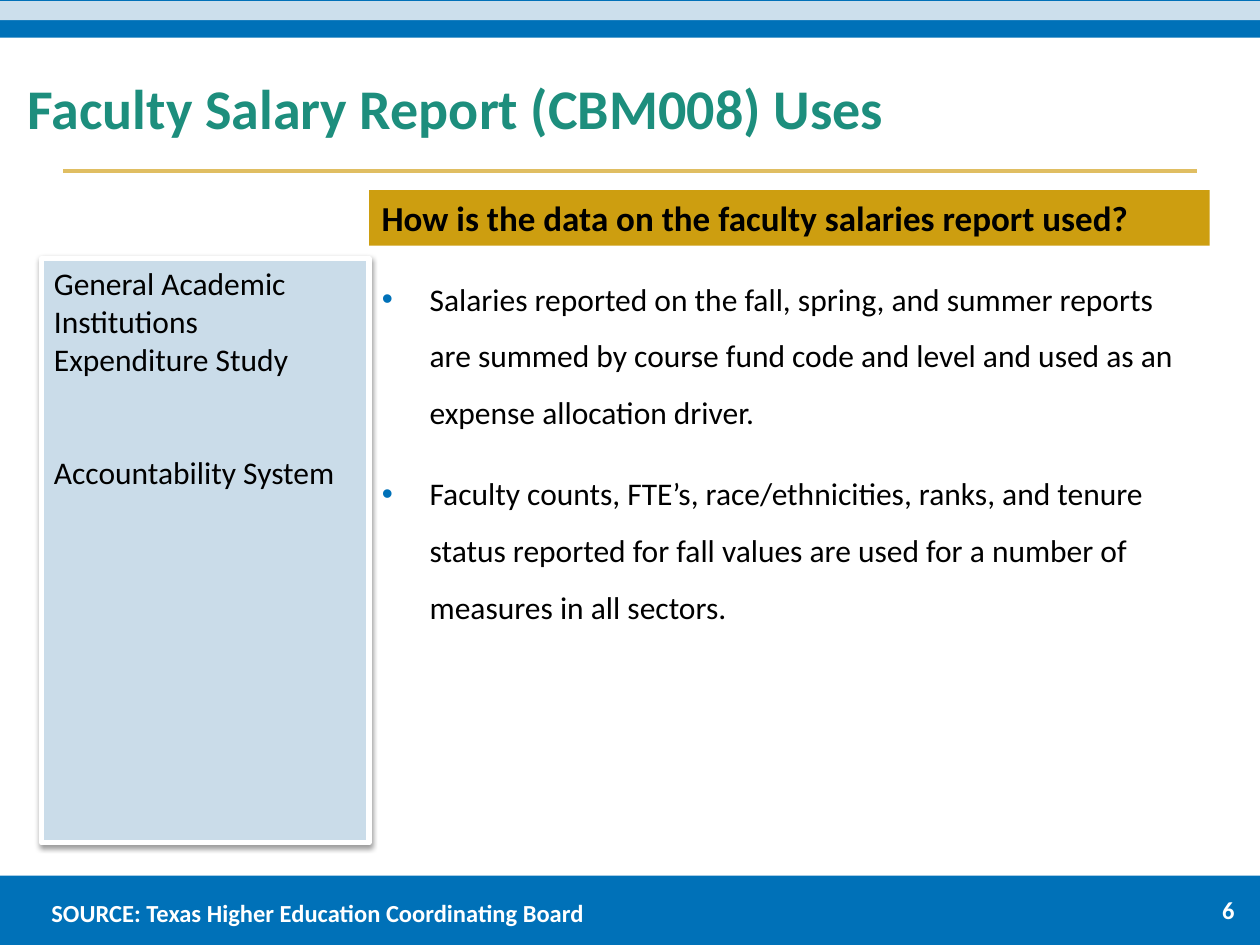
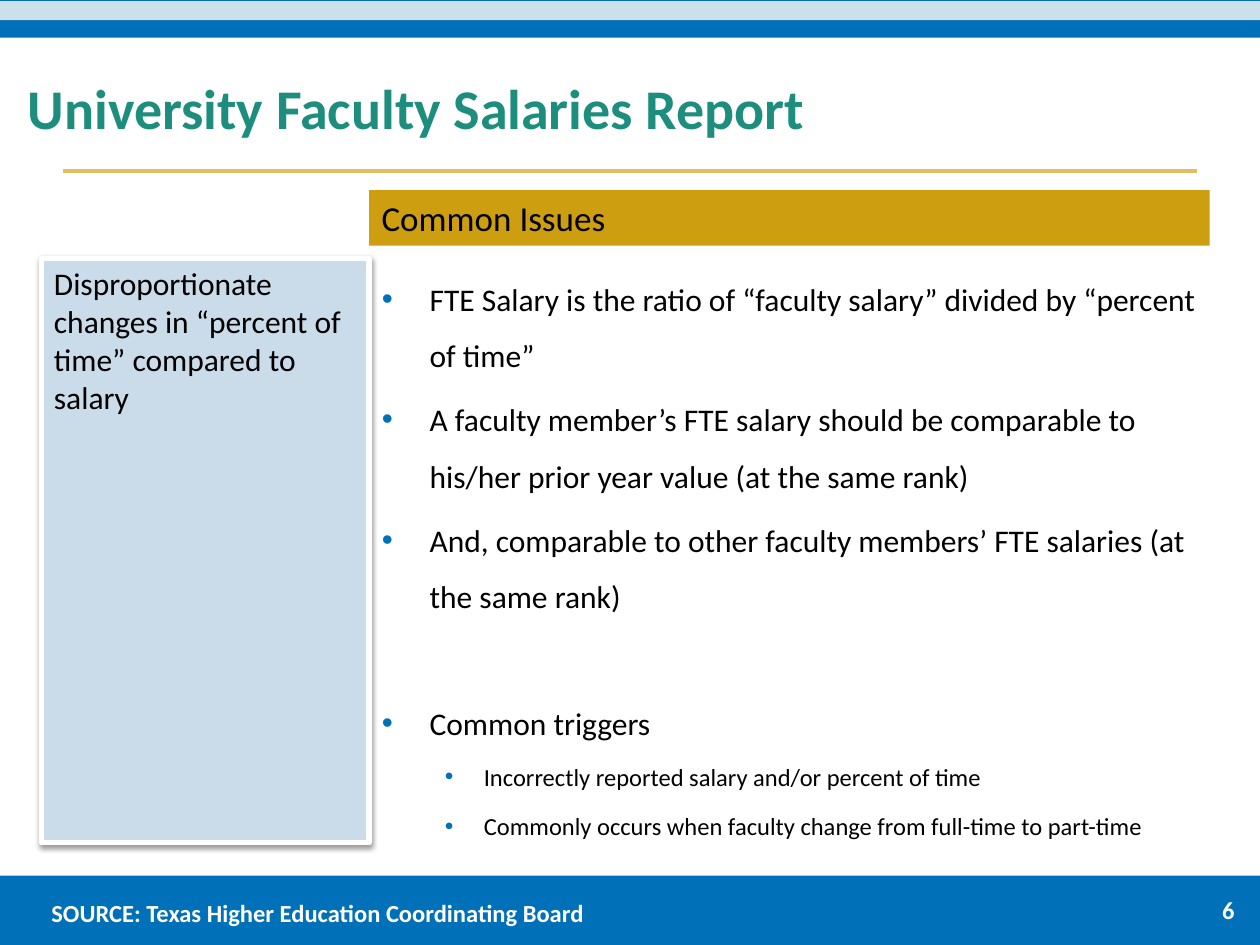
"""Build two slides on the faculty salary report: its uses and its common issues."""
from lxml import etree
from pptx import Presentation
from pptx.dml.color import RGBColor
from pptx.enum import shapes, text
from pptx.oxml import ns
from pptx.util import Inches, Pt

FONT = "Calibri"
BLUE, PALE_BLUE, SIDEBAR_BLUE = "0071B8", "CCDFEC", "CADCE9"
GOLD, PALE_GOLD, TEAL = "CD9E10", "E0BE62", "1D8E7D"
BLACK, WHITE = "000000", "FFFFFF"
SOURCE = "SOURCE: Texas Higher Education Coordinating Board"
PAGE_WIDTH, PAGE_HEIGHT = 10, 7.5
FOOTER_TOP = 6.95
CONTENT_LEFT, CONTENT_WIDTH = 2.93, 6.67
LEVELS = [(18, 0.38, -0.38, 4), (14, 0.81, -0.31, 3)]


def color(hex_code):
    """Turn a hex string into a colour."""
    return RGBColor.from_string(hex_code)


def add_xml(parent, tag, **attributes):
    """Append a DrawingML element to a parent."""
    return etree.SubElement(parent, ns.qn(tag), attributes)


def format_runs(paragraph, size, hex_code, bold=False):
    """Give all runs of a paragraph the same font."""
    for run in paragraph.runs:
        run.font.name = FONT
        run.font.size = Pt(size)
        run.font.bold = bold
        run.font.color.rgb = color(hex_code)


def write(shape, lines, size, hex_code, bold=False, anchor=text.MSO_ANCHOR.TOP, gap=0):
    """Write left-aligned paragraphs, with a gap in points between them."""
    frame = shape.text_frame
    frame.text = "\n".join(lines)
    frame.word_wrap = True
    frame.auto_size = text.MSO_AUTO_SIZE.NONE
    frame.vertical_anchor = anchor
    for index, paragraph in enumerate(frame.paragraphs):
        paragraph.alignment = text.PP_ALIGN.LEFT
        paragraph.space_before = Pt(gap if index else 0)
        format_runs(paragraph, size, hex_code, bold)


def place(shape, left, top, width, height):
    """Move and size a shape in inches."""
    shape.left, shape.top = Inches(left), Inches(top)
    shape.width, shape.height = Inches(width), Inches(height)


def add_block(slide, left, top, width, height, fill):
    """Add a plain filled rectangle."""
    block = slide.shapes.add_shape(
        shapes.MSO_SHAPE.RECTANGLE, Inches(left), Inches(top), Inches(width), Inches(height))
    block.fill.solid()
    block.fill.fore_color.rgb = color(fill)
    block.line.fill.background()
    block.shadow.inherit = False
    return block


def add_label(slide, left, top, width, height, words, anchor):
    """Add bold white text on the footer."""
    label = slide.shapes.add_textbox(Inches(left), Inches(top), Inches(width), Inches(height))
    write(label, [words], 14, WHITE, True, anchor)


def add_frame(slide):
    """Add the bands, the title rule and the footer text."""
    add_block(slide, 0, FOOTER_TOP, PAGE_WIDTH, PAGE_HEIGHT - FOOTER_TOP, BLUE)
    add_block(slide, 0, 0, PAGE_WIDTH, 0.3, BLUE)
    add_block(slide, 0, 0.01, PAGE_WIDTH, 0.15, PALE_BLUE)
    rule = slide.shapes.add_connector(
        shapes.MSO_CONNECTOR.STRAIGHT, Inches(0.5), Inches(1.36), Inches(9.5), Inches(1.36))
    rule.line.color.rgb = color(PALE_GOLD)
    rule.line.width = Pt(2.25)
    add_xml(rule._element.spPr, "a:effectLst")
    add_label(slide, 9.6, FOOTER_TOP, 0.42, 0.54, "6", text.MSO_ANCHOR.MIDDLE)
    add_label(slide, 0.31, 7.08, 6, 0.34, SOURCE, text.MSO_ANCHOR.TOP)


def fill_title(slide, words):
    """Place and write the slide title."""
    title = slide.shapes.title
    place(title, 0.22, 0.42, 9.7, 0.75)
    write(title, [words], 32, TEAL, True, text.MSO_ANCHOR.BOTTOM)
    title.text_frame.margin_left = title.text_frame.margin_right = 0


def add_sidebar(slide, topics):
    """Add the framed topic panel with its soft shadow."""
    sidebar = add_block(slide, 0.33, 2.05, 2.6, 4.64, SIDEBAR_BLUE)
    sidebar.line.color.rgb = color(WHITE)
    sidebar.line.width = Pt(3)
    effects = sidebar._element.spPr.find(ns.qn("a:effectLst"))
    shadow = add_xml(effects, "a:outerShdw", blurRad=str(Pt(3.1)), dist=str(Pt(1.6)),
                     dir="5400000", rotWithShape="0")
    shade = add_xml(shadow, "a:srgbClr", val=BLACK)
    add_xml(shade, "a:alpha", val="38000")
    write(sidebar, topics, 18, BLACK, gap=43)


def add_heading(slide, words, bold):
    """Add the gold heading above the list."""
    heading = add_block(slide, CONTENT_LEFT, 1.51, CONTENT_WIDTH, 0.44, GOLD)
    write(heading, [words], 20, BLACK, bold)


def fill_list(slide, points):
    """Write bullets given as (text, level, extra space before)."""
    body = slide.placeholders[1]
    place(body, CONTENT_LEFT, 2.02, CONTENT_WIDTH, 4.7)
    frame = body.text_frame
    frame.text = "\n".join(words for words, _, _ in points)
    frame.auto_size = text.MSO_AUTO_SIZE.NONE
    for paragraph, (_, level, extra) in zip(frame.paragraphs, points):
        size, margin, indent, gap = LEVELS[level]
        paragraph.level = level
        properties = paragraph._p.get_or_add_pPr()
        properties.set("marL", str(Inches(margin)))
        properties.set("indent", str(Inches(indent)))
        bullet_color = add_xml(properties, "a:buClr")
        add_xml(bullet_color, "a:srgbClr", val=BLUE)
        add_xml(properties, "a:buFont", typeface="Arial")
        add_xml(properties, "a:buChar", char="•")
        paragraph.line_spacing = 1.5
        paragraph.space_before = Pt(gap + extra)
        format_runs(paragraph, size, BLACK)


def add_report_slide(deck, title, heading, topics, points, bold_heading=False):
    """Add one complete report slide."""
    slide = deck.slides.add_slide(deck.slide_layouts[1])
    add_frame(slide)
    fill_title(slide, title)
    add_sidebar(slide, topics)
    fill_list(slide, points)
    add_heading(slide, heading, bold_heading)


def main():
    """Build and save the deck."""
    deck = Presentation()
    deck.slide_width, deck.slide_height = Inches(PAGE_WIDTH), Inches(PAGE_HEIGHT)
    add_report_slide(
        deck,
        "Faculty Salary Report (CBM008) Uses",
        "How is the data on the faculty salaries report used?",
        ["General Academic Institutions Expenditure Study", "Accountability System"],
        [("Salaries reported on the fall, spring, and summer reports are summed by course "
          "fund code and level and used as an expense allocation driver.", 0, 0),
         ("Faculty counts, FTE’s, race/ethnicities, ranks, and tenure status reported for "
          "fall values are used for a number of measures in all sectors.", 0, 10)],
        bold_heading=True)
    add_report_slide(
        deck,
        "University Faculty Salaries Report",
        "Common Issues",
        ["Disproportionate changes in “percent of time” compared to salary"],
        [("FTE Salary is the ratio of “faculty salary” divided by “percent of time”", 0, 0),
         ("A faculty member’s FTE salary should be comparable to his/her prior year value "
          "(at the same rank)", 0, 0),
         ("And, comparable to other faculty members’ FTE salaries (at the same rank)", 0, 0),
         ("Common triggers", 0, 36),
         ("Incorrectly reported salary and/or percent of time", 1, 0),
         ("Commonly occurs when faculty change from full-time to part-time", 1, 0)])
    deck.save("out.pptx")


if __name__ == "__main__":
    main()
